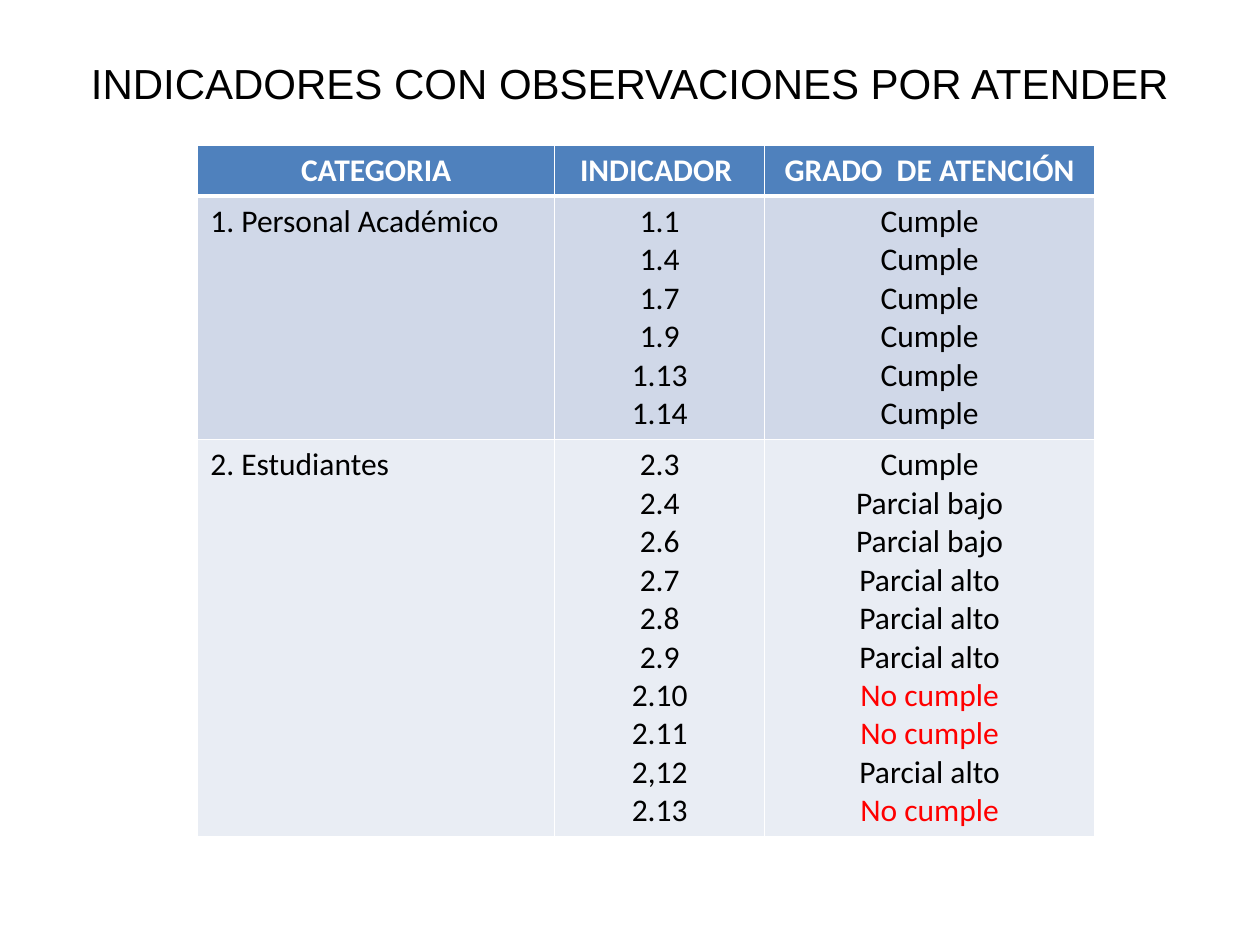
import pptx
import pptx.util
import pptx.dml.color
import pptx.enum.text
import pptx.oxml.ns
from lxml import etree

Pt = pptx.util.Pt
ALIGN = pptx.enum.text.PP_ALIGN

COLORS = {
    "header": "4F81BD",
    "band_dark": "D0D8E8",
    "band_light": "E9EDF4",
    "white": "FFFFFF",
    "black": "000000",
    "alert": "FF0000",
}

TITLE = "INDICADORES CON OBSERVACIONES POR ATENDER"
HEADERS = ["CATEGORIA", "INDICADOR ", "GRADO  DE ATENCIÓN"]
CATEGORIES = [
    ("1. Personal Académico", "band_dark", [
        ("1.1", "Cumple"),
        ("1.4", "Cumple"),
        ("1.7", "Cumple"),
        ("1.9", "Cumple"),
        ("1.13", "Cumple"),
        ("1.14", "Cumple"),
    ]),
    ("2. Estudiantes", "band_light", [
        ("2.3", "Cumple"),
        ("2.4", "Parcial bajo"),
        ("2.6", "Parcial bajo"),
        ("2.7", "Parcial alto"),
        ("2.8", "Parcial alto"),
        ("2.9", "Parcial alto"),
        ("2.10", "No cumple"),
        ("2.11", "No cumple"),
        ("2,12", "Parcial alto"),
        ("2.13", "No cumple"),
    ]),
]
COLUMN_WIDTHS = [204, 120, 188.5]
LINE_HEIGHT = 22
CELL_PADDING = 7.2


def color(name):
    return pptx.dml.color.RGBColor.from_string(COLORS[name])


def format_paragraph(paragraph, font, size, color_name, alignment, bold=False):
    paragraph.alignment = alignment
    for run in paragraph.runs:
        run.font.name = font
        run.font.size = Pt(size)
        run.font.bold = bold
        run.font.color.rgb = color(color_name)


def add_title(slide):
    box = slide.shapes.add_textbox(Pt(0), Pt(29.5), Pt(720), Pt(36))
    box.text_frame.word_wrap = True
    box.text_frame.text = TITLE
    format_paragraph(box.text_frame.paragraphs[0], "Arial", 24, "black", ALIGN.CENTER)


def set_borders(cell, top, bottom):
    properties = cell._tc.get_or_add_tcPr()
    qn = pptx.oxml.ns.qn
    for side, width in (("L", 1), ("R", 1), ("T", top), ("B", bottom)):
        line = etree.SubElement(properties, qn(f"a:ln{side}"), w=str(Pt(width)))
        fill = etree.SubElement(line, qn("a:solidFill"))
        etree.SubElement(fill, qn("a:srgbClr"), val=COLORS["white"])


def fill_cell(cell, lines, fill_name, alignment, is_header=False, top=1, bottom=1):
    set_borders(cell, top, bottom)
    cell.fill.solid()
    cell.fill.fore_color.rgb = color(fill_name)
    cell.text_frame.text = "\n".join(lines)
    for line, paragraph in zip(lines, cell.text_frame.paragraphs):
        text_color = "white" if is_header else "alert" if line == "No cumple" else "black"
        format_paragraph(paragraph, "Calibri", 18, text_color, alignment, is_header)


def add_indicator_table(slide):
    line_counts = [1] + [len(items) for _, _, items in CATEGORIES]
    heights = [CELL_PADDING + LINE_HEIGHT * count for count in line_counts]
    table = slide.shapes.add_table(
        len(heights), len(HEADERS), Pt(113), Pt(82.8),
        Pt(sum(COLUMN_WIDTHS)), Pt(sum(heights))).table
    for column, width in zip(table.columns, COLUMN_WIDTHS):
        column.width = Pt(width)
    for row, height in zip(table.rows, heights):
        row.height = Pt(height)
    for index, header in enumerate(HEADERS):
        fill_cell(table.cell(0, index), [header], "header", ALIGN.CENTER, True, bottom=3)
    for row_index, (category, fill_name, items) in enumerate(CATEGORIES, 1):
        indicators, grades = zip(*items)
        top = 3 if row_index == 1 else 1
        for index, lines in enumerate(([category], indicators, grades)):
            alignment = ALIGN.CENTER if index else ALIGN.LEFT
            fill_cell(table.cell(row_index, index), lines, fill_name, alignment, top=top)


def main():
    presentation = pptx.Presentation()
    presentation.slide_width = Pt(720)
    presentation.slide_height = Pt(540)
    slide = presentation.slides.add_slide(presentation.slide_layouts[6])
    add_indicator_table(slide)
    add_title(slide)
    presentation.save("out.pptx")


if __name__ == "__main__":
    main()
